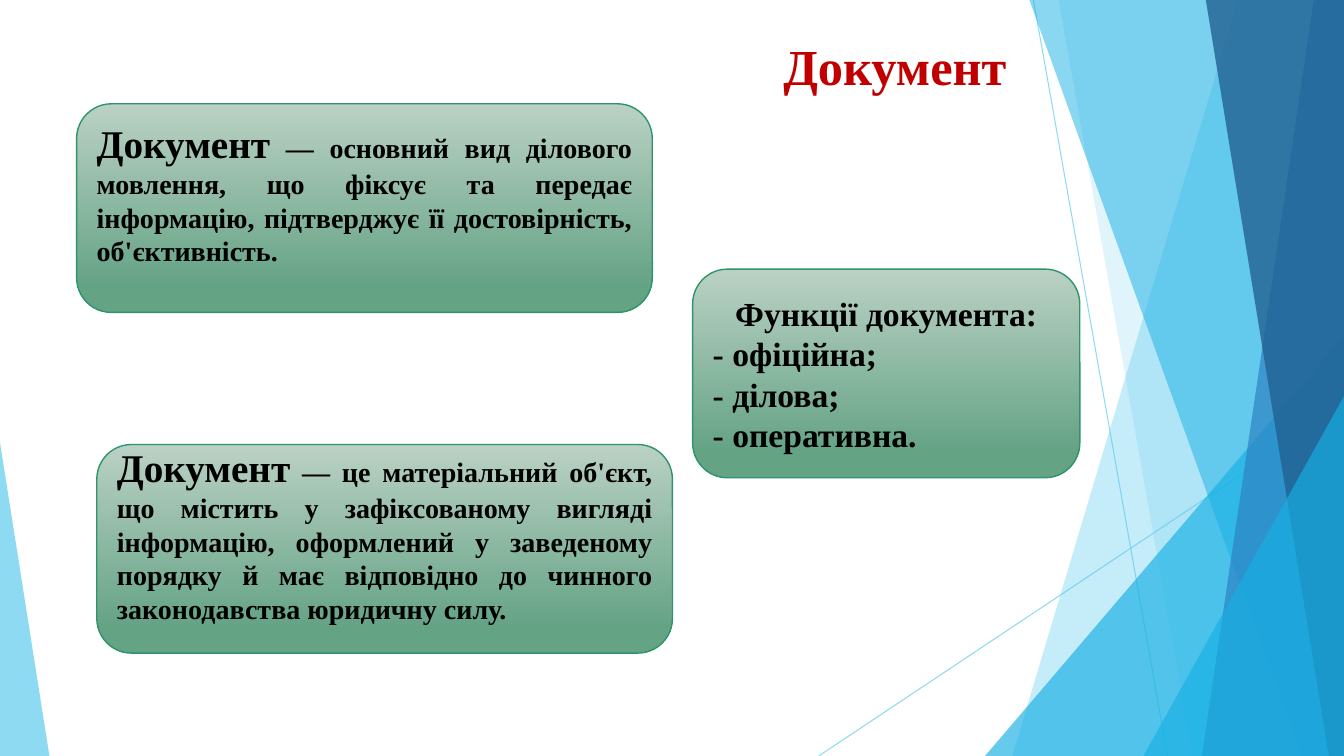
from dataclasses import dataclass

from lxml.etree import SubElement
from pptx import Presentation
from pptx.dml.color import RGBColor
from pptx.enum.shapes import MSO_CONNECTOR, MSO_SHAPE
from pptx.enum.text import MSO_ANCHOR, PP_ALIGN
from pptx.oxml.ns import qn
from pptx.util import Inches, Pt

W, H = 13.33, 7.5


@dataclass(frozen=True)
class Theme:
    font: str = "Times New Roman"
    text: str = "000000"
    title: str = "C00000"
    sky: str = "5FCBEF"
    cyan: str = "17B0E4"
    blue: str = "2E83C3"
    navy: str = "226292"
    card_top: str = "BAD1C4"
    card_bottom: str = "65A385"
    card_line: str = "2E946B"
    title_size: int = 36
    term_size: int = 28
    list_size: int = 24
    body_size: int = 20


class SlideBuilder:
    def __init__(self, slide, theme):
        self.shapes = slide.shapes
        self.theme = theme

    def set_alpha(self, fill, percent):
        """Make a solid fill partly transparent; percent is its opacity."""
        color = fill._xPr.find(qn("a:solidFill"))[0]
        SubElement(color, qn("a:alpha"), val=str(percent * 1000))

    def tint(self, sp, color, opacity):
        sp.shadow.inherit = False
        sp.fill.solid()
        sp.fill.fore_color.rgb = RGBColor.from_string(color)
        self.set_alpha(sp.fill, opacity)
        sp.line.fill.background()

    def ray(self, x1, y1, x2, y2):
        cxn = self.shapes.add_connector(
            MSO_CONNECTOR.STRAIGHT, Inches(x1), Inches(y1), Inches(x2), Inches(y2))
        cxn.line.width = Pt(0.75)
        cxn.line.color.rgb = RGBColor.from_string(self.theme.sky)
        self.set_alpha(cxn.line.fill, 70)
        SubElement(cxn._element.spPr, qn("a:effectLst"))

    def panel(self, top_x, bottom_x, color, opacity):
        """Full-height band from a slanted left edge to the slide's right edge."""
        fb = self.shapes.build_freeform(Inches(top_x), 0)
        corners = [(W, 0), (W, H), (bottom_x, H)]
        fb.add_line_segments([(Inches(x), Inches(y)) for x, y in corners])
        self.tint(fb.convert_to_shape(), color, opacity)

    def corner(self, x, w, h, apex, color, opacity):
        """Triangle on the bottom edge; apex runs from 0 (left) to 1 (right)."""
        sp = self.shapes.add_shape(MSO_SHAPE.ISOSCELES_TRIANGLE,
                                   Inches(x), Inches(H - h), Inches(w), Inches(h))
        sp.adjustments[0] = apex
        self.tint(sp, color, opacity)

    def paragraph(self, p, runs, color, align):
        """Fill a paragraph with (text, size) runs."""
        p.alignment = align
        p.font.name = self.theme.font
        p.font.bold = True
        p.font.color.rgb = RGBColor.from_string(color)
        for text, size in runs:
            r = p.add_run()
            r.text = text
            r.font.size = Pt(size)

    def title(self, text, x, y, w, h):
        tf = self.shapes.add_textbox(Inches(x), Inches(y), Inches(w), Inches(h)).text_frame
        tf.word_wrap = True
        tf.margin_top = Inches(0.1)
        self.paragraph(tf.paragraphs[0], [(text, self.theme.title_size)],
                       self.theme.title, PP_ALIGN.LEFT)

    def card(self, x, y, w, paragraphs, bottom=0.05):
        """Rounded card; paragraphs holds (alignment, runs) pairs."""
        sp = self.shapes.add_shape(MSO_SHAPE.ROUNDED_RECTANGLE,
                                   Inches(x), Inches(y), Inches(w), Inches(2.07))
        sp.shadow.inherit = False
        sp.fill.gradient()
        sp.fill.gradient_angle = 270
        stops = [(0, self.theme.card_top), (0.88, self.theme.card_bottom)]
        for stop, (position, color) in zip(sp.fill.gradient_stops, stops):
            stop.position = position
            stop.color.rgb = RGBColor.from_string(color)
        sp.line.width = Pt(1)
        sp.line.color.rgb = RGBColor.from_string(self.theme.card_line)
        tf = sp.text_frame
        tf.word_wrap = True
        tf.vertical_anchor = MSO_ANCHOR.MIDDLE
        tf.margin_bottom = Inches(bottom)
        for i, (align, runs) in enumerate(paragraphs):
            p = tf.add_paragraph() if i else tf.paragraphs[0]
            self.paragraph(p, runs, self.theme.text, align)

    def definition(self, x, y, term, meaning):
        runs = [(term, self.theme.term_size), (meaning, self.theme.body_size)]
        self.card(x, y, 5.71, [(PP_ALIGN.JUSTIFY, runs)], bottom=0.34)

    def list_card(self, x, y, heading, items):
        size = self.theme.list_size
        lines = [(PP_ALIGN.CENTER, [(heading, size)])]
        lines += [(PP_ALIGN.LEFT, [(f"- {item}", size)]) for item in items]
        self.card(x, y, 3.84, lines)


def main():
    prs = Presentation()
    prs.slide_width, prs.slide_height = Inches(W), Inches(H)
    t = Theme()
    s = SlideBuilder(prs.slides.add_slide(prs.slide_layouts[6]), t)

    s.ray(10.25, 0, 11.58, H)
    s.ray(W, 4.03, 8.12, H)
    s.panel(12.28, 10.04, t.sky, 36)
    s.panel(10.5, 11.83, t.sky, 20)
    s.corner(9.77, 3.56, 4.17, 1, t.cyan, 66)
    s.panel(10.21, 12.91, t.cyan, 50)
    s.panel(13.03, 11.92, t.blue, 70)
    s.panel(11.96, 13.18, t.navy, 80)
    s.corner(11.34, 1.99, 3.57, 1, t.cyan, 66)
    s.corner(0, 0.49, 3.11, 0, t.sky, 70)

    s.title("Документ", 7.67, 0.25, 3.69, 1.19)
    s.definition(0.76, 1.03, "Документ",
                 " — основний вид ділового мовлення, що фіксує та передає "
                 "інформацію, підтверджує її достовірність, об'єктивність.")
    s.definition(0.96, 4.41, "Документ",
                 " — це матеріальний об'єкт, що містить у зафіксованому вигляді "
                 "інформацію, оформлений у заведеному порядку й має відповідно "
                 "до чинного законодавства юридичну силу.")
    s.list_card(6.87, 2.67, "Функції документа:",
                ["офіційна;", "ділова;", "оперативна."])

    prs.save("out.pptx")


if __name__ == "__main__":
    main()
